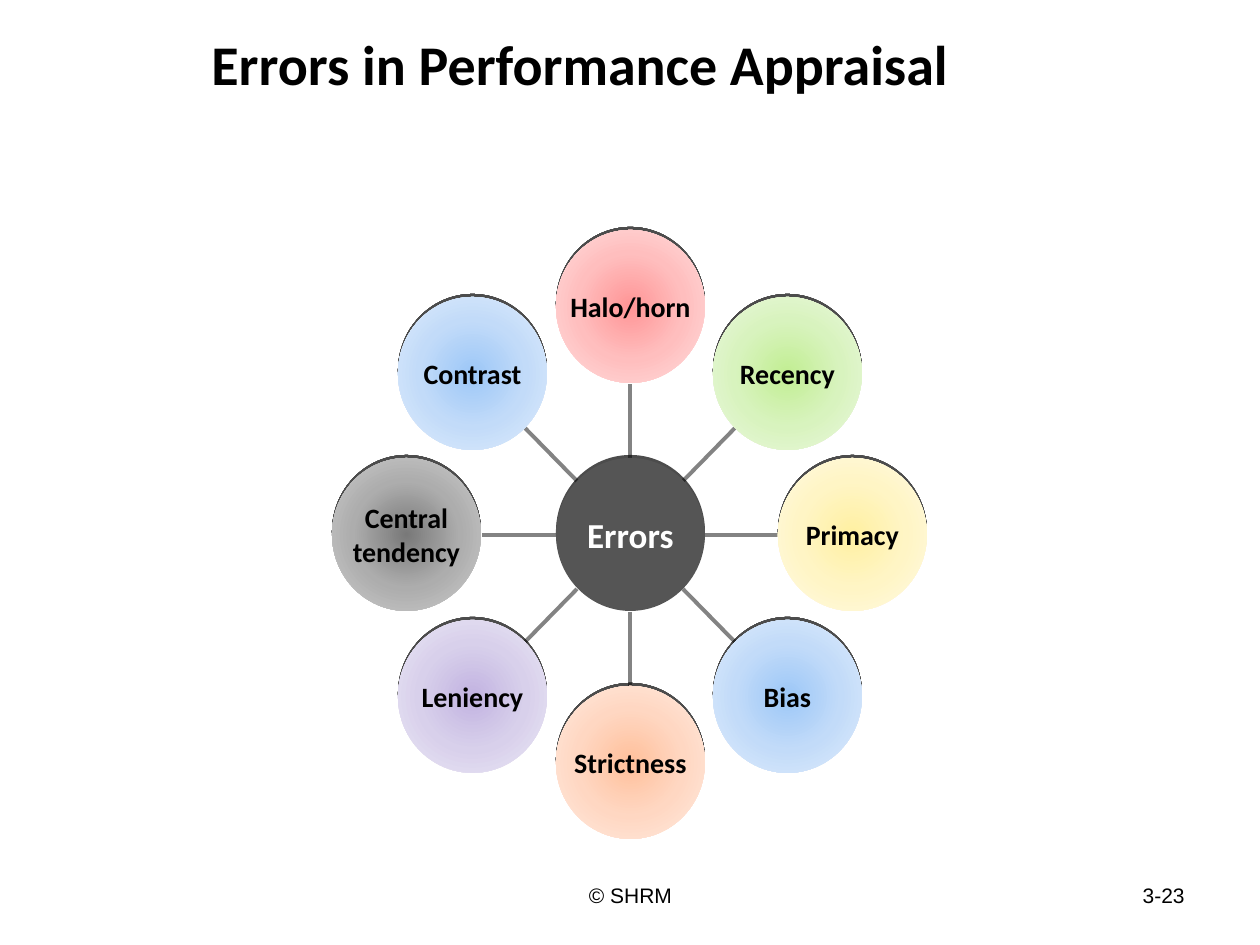
from math import cos, radians, sin

from lxml.etree import SubElement
from pptx import Presentation
from pptx.dml.color import RGBColor
from pptx.enum.shapes import MSO_CONNECTOR, MSO_SHAPE
from pptx.enum.text import MSO_ANCHOR, PP_ALIGN
from pptx.oxml import parse_xml
from pptx.oxml.ns import nsdecls, qn
from pptx.util import Pt

PX = 914400 // 126
BLACK = RGBColor(0, 0, 0)
WHITE = RGBColor(255, 255, 255)
HUB = RGBColor(0x55, 0x55, 0x55)
SPOKE = RGBColor(0x83, 0x83, 0x83)
CX, CY = 630, 535
W, H = 149, 153
RX, RY = 223, 228

BLUE = ("9CC7F7", "C2DBF9", "E1EDFB")
ERRORS = [
    ("Halo/horn", ("FF9596", "FFBEBE", "FFDFDF")),
    ("Recency", ("C2EE93", "D8F3BE", "EBF8DF")),
    ("Primacy", ("FFF0A1", "FFF5C5", "FFFAE3")),
    ("Bias", BLUE),
    ("Strictness", ("FFC09B", "FFD7C2", "FFEBE1")),
    ("Leniency", ("C2B3E1", "D8D0EB", "ECE8F5")),
    ("Central\ntendency", ("797979", "ADADAD", "CDCDCD")),
    ("Contrast", BLUE),
]


def write(tf, text, size, color, align, name="Calibri", bold=True):
    tf.text = text
    for p in tf.paragraphs:
        p.alignment = align
        p.font.size = Pt(size)
        p.font.name = name
        p.font.bold = bold
        p.font.color.rgb = color


def add_circle(x, y, text, size, color, stops=None):
    s = slide.shapes.add_shape(MSO_SHAPE.OVAL, round(x - W / 2) * PX,
                               round(y - H / 2) * PX, W * PX, H * PX)
    if stops:
        gs = "".join(f'<a:gs pos="{i * 50000}"><a:srgbClr val="{c}"/></a:gs>'
                     for i, c in enumerate(stops))
        s._element.spPr.insert(2, parse_xml(
            f'<a:gradFill {nsdecls("a")} rotWithShape="1"><a:gsLst>{gs}</a:gsLst>'
            '<a:path path="circle"><a:fillToRect l="50000" t="50000" '
            'r="50000" b="50000"/></a:path></a:gradFill>'))
    else:
        s.fill.solid()
        s.fill.fore_color.rgb = HUB
    s.line.fill.background()
    s.shadow.inherit = False
    s._element.spPr.find(qn("a:effectLst")).append(parse_xml(
        f'<a:outerShdw {nsdecls("a")} dist="22000" dir="16200000" rotWithShape="0">'
        '<a:srgbClr val="000000"><a:alpha val="70000"/></a:srgbClr></a:outerShdw>'))
    tf = s.text_frame
    tf.margin_left = tf.margin_right = tf.margin_top = tf.margin_bottom = 0
    tf.word_wrap = False
    tf.vertical_anchor = MSO_ANCHOR.MIDDLE
    write(tf, text, size, color, PP_ALIGN.CENTER)


prs = Presentation()
prs.slide_width, prs.slide_height = 1260 * PX, 945 * PX
slide = prs.slides.add_slide(prs.slide_layouts[6])

title = slide.shapes.add_textbox(199 * PX, 0, 1029 * PX, 126 * PX)
title.text_frame.word_wrap = True
title.text_frame.vertical_anchor = MSO_ANCHOR.MIDDLE
write(title.text_frame, "Errors in Performance Appraisal", 32, BLACK, PP_ALIGN.LEFT)

for i, (label, stops) in enumerate(ERRORS):
    angle = radians(i * 360 / len(ERRORS) - 90)
    dx, dy = cos(angle), sin(angle)
    ends = [CX + dx * W / 2, CY + dy * H / 2,
            CX + dx * (RX - W / 2), CY + dy * (RY - H / 2)]
    spoke = slide.shapes.add_connector(MSO_CONNECTOR.STRAIGHT,
                                       *[round(v) * PX for v in ends])
    spoke.line.color.rgb = SPOKE
    spoke.line.width = Pt(2.25)
    SubElement(spoke._element.spPr, qn("a:effectLst"))
    add_circle(CX + dx * RX, CY + dy * RY, label, 16, BLACK, stops)

add_circle(CX, CY, "Errors", 20, WHITE)

for left, width, text, align in [(903, 294, "3-23", PP_ALIGN.RIGHT),
                                 (431, 399, "© SHRM", PP_ALIGN.CENTER)]:
    s = slide.shapes.add_textbox(left * PX, 876 * PX, width * PX, 50 * PX)
    s.text_frame.word_wrap = True
    write(s.text_frame, text, 12, BLACK, align, "Arial", False)

prs.save("out.pptx")
